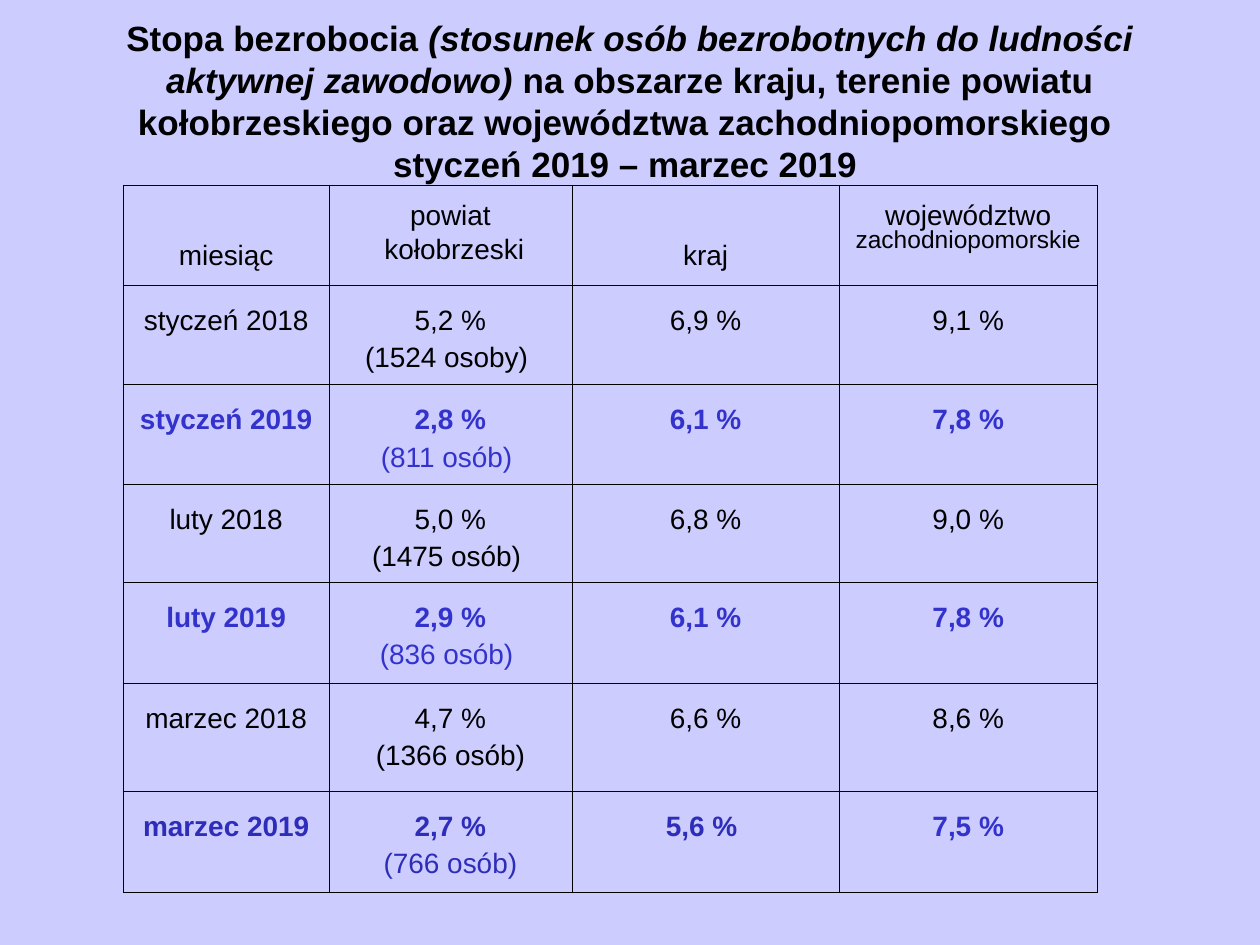
from lxml import etree
from pptx import Presentation, dml, util as u
from pptx.dml import color as dml_color
from pptx.enum import text
from pptx.oxml import ns

BLACK, BLUE, DARK_BLUE = "000000", "3333CC", "2D2DB9"
MARGIN_X, MARGIN_Y = u.Inches(0.1), u.Inches(0.05)


def rgb(hex_string):
    return dml_color.RGBColor.from_string(hex_string)


def add_border(cell, position, tag, width):
    """Put one border line at its schema position in the cell properties."""
    line = etree.Element(ns.qn(f"a:{tag}"), w=str(u.Pt(width)))
    fill = etree.SubElement(line, ns.qn("a:solidFill"))
    etree.SubElement(fill, ns.qn("a:srgbClr"), val=BLACK)
    cell._tc.get_or_add_tcPr().insert(position, line)


deck = Presentation()
deck.slide_width, deck.slide_height = u.Inches(10), u.Inches(7.5)
slide = deck.slides.add_slide(deck.slide_layouts[6])
slide.background.fill.solid()
slide.background.fill.fore_color.rgb = rgb("CCCCFF")

# Title
heading = slide.shapes.add_textbox(
    u.Inches(0.5), u.Inches(0.13), u.Inches(9), u.Inches(1.34)).text_frame
heading.word_wrap = True
heading.vertical_anchor = text.MSO_ANCHOR.MIDDLE
title = heading.paragraphs[0]
title.alignment = text.PP_ALIGN.CENTER
title.font.name, title.font.size, title.font.bold = "Arial", u.Pt(20), True
title.font.color.rgb = rgb(BLACK)
title.add_run().text = "Stopa bezrobocia "
definition = title.add_run()
definition.text = "(stosunek osób bezrobotnych do ludności aktywnej zawodowo)"
definition.font.italic = True
title.add_run().text = (" na obszarze kraju, terenie powiatu kołobrzeskiego "
                        "oraz województwa zachodniopomorskiego ")
title.add_line_break()
title.add_run().text = "styczeń 2019 – marzec 2019 "

# Unemployment table: a line break inside a cell starts a new paragraph
rates = [
    ("miesiąc", "powiat\n kołobrzeski", "kraj", "województwo "),
    ("styczeń 2018", "5,2 %\n(1524 osoby) ", "6,9 %", "9,1 %"),
    ("styczeń 2019", "2,8 %\n(811 osób) ", "6,1 %", "7,8 %"),
    ("luty 2018", "5,0 %\n(1475 osób) ", "6,8 %", "9,0 %"),
    ("luty 2019", "2,9 %\n(836 osób) ", "6,1 %", "7,8 %"),
    ("marzec 2018", "4,7 %\n(1366 osób)", "6,6 %", "8,6 %"),
    ("marzec 2019", "2,7 %\n(766 osób)", "5,6 % ", "7,5 %"),
]
column_widths = [1.63, 1.93, 2.12, 2.05]
row_heights = [0.79, 0.79, 0.79, 0.77, 0.8, 0.86, 0.8]
last_row, last_column = len(row_heights) - 1, len(column_widths) - 1

table = slide.shapes.add_table(
    len(row_heights), len(column_widths), u.Inches(0.98), u.Inches(1.47),
    u.Inches(sum(column_widths)), u.Inches(sum(row_heights))).table
table.first_row = table.horz_banding = False
for column, width in zip(table.columns, column_widths):
    column.width = u.Inches(width)
for row, height in zip(table.rows, row_heights):
    row.height = u.Inches(height)

for r, values in enumerate(rates):
    is_header = r == 0
    is_2019 = values[0].endswith("2019")
    for c, value in enumerate(values):
        cell = table.cell(r, c)
        cell.fill.background()
        cell.margin_left = cell.margin_right = MARGIN_X
        cell.margin_bottom = MARGIN_Y
        sits_low = is_header and c in (0, 2)
        cell.margin_top = u.Inches(0.48 if sits_low else 0.16 if is_header else 0.2)
        edges = [("lnL", c == 0), ("lnR", c == last_column),
                 ("lnT", r == 0), ("lnB", False)]
        for position, (tag, is_outer) in enumerate(edges):
            add_border(cell, position, tag, 0.23 if is_outer else 0.11)

        ink = BLUE if is_2019 else BLACK
        if r == last_row and c < last_column:
            ink = DARK_BLUE
        cell.text = value
        for n, paragraph in enumerate(cell.text_frame.paragraphs):
            paragraph.alignment = text.PP_ALIGN.CENTER
            paragraph.line_spacing = 0.81
            paragraph.space_before = u.Pt(5 if is_header else 7)
            paragraph.font.name, paragraph.font.size = "Arial", u.Pt(16)
            paragraph.font.bold = is_2019 and n == 0
            paragraph.font.color.rgb = rgb(ink)

region = table.cell(0, last_column).text_frame.paragraphs[0].add_run()
region.text = "zachodniopomorskie"
region.font.size = u.Pt(14)

deck.save("out.pptx")
